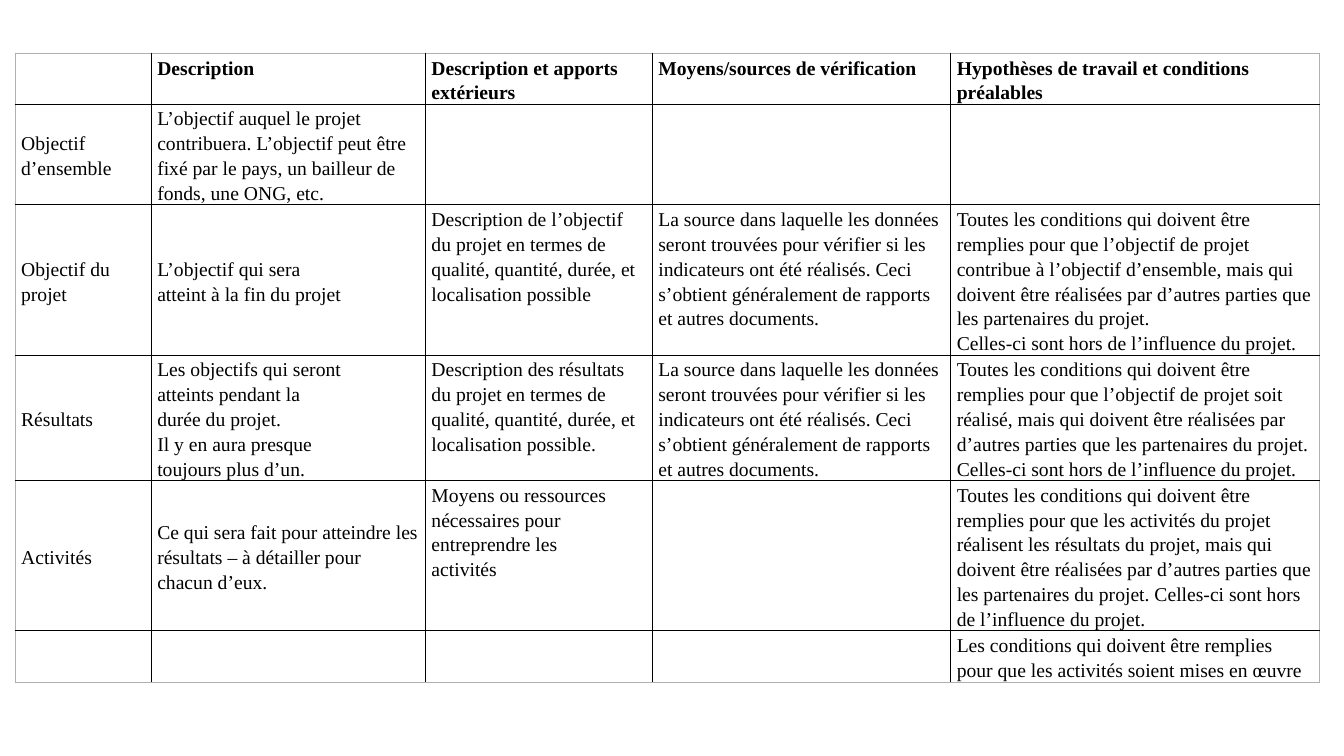
from dataclasses import dataclass

from pptx import Presentation
from pptx.dml.color import RGBColor
from pptx.enum.text import MSO_ANCHOR
from pptx.oxml.ns import qn
from pptx.util import Inches, Pt
from lxml.etree import SubElement

BLACK = RGBColor(0x00, 0x00, 0x00)
GREY = RGBColor(0xB0, 0xB0, 0xB0)
BORDER_WIDTH = Pt(1)
FONT = {"name": "Times New Roman", "size": Pt(14)}
MARGINS = {"margin_left": Inches(0.06), "margin_right": Inches(0.06),
           "margin_top": Inches(0.01), "margin_bottom": Inches(0)}
COLUMN_WIDTHS = (1.35, 2.72, 2.25, 2.96, 3.66)
SOURCES = ("La source dans laquelle les données seront trouvées pour vérifier si les "
           "indicateurs ont été réalisés. Ceci s’obtient généralement de rapports et "
           "autres documents.")


@dataclass(frozen=True)
class Level:
    height: float
    name: str = ""
    description: str = ""
    inputs: str = ""
    sources: str = ""
    conditions: str = ""

    def texts(self) -> tuple[str, ...]:
        return self.name, self.description, self.inputs, self.sources, self.conditions


LEVELS = (
    Level(0.42, "", "Description", "Description et apports extérieurs",
          "Moyens/sources de vérification",
          "Hypothèses de travail et conditions préalables"),
    Level(0.85, "Objectif d’ensemble",
          "L’objectif auquel le projet contribuera. L’objectif peut être fixé par le "
          "pays, un bailleur de fonds, une ONG, etc."),
    Level(1.18, "Objectif du projet",
          "L’objectif qui sera\natteint à la fin du projet",
          "Description de l’objectif du projet en termes de qualité, quantité, durée, "
          "et localisation possible",
          SOURCES,
          "Toutes les conditions qui doivent être remplies pour que l’objectif de "
          "projet contribue à l’objectif d’ensemble, mais qui doivent être réalisées "
          "par d’autres parties que les partenaires du projet.\n"
          "Celles-ci sont hors de l’influence du projet."),
    Level(1.02, "Résultats",
          "Les objectifs qui seront\natteints pendant la\ndurée du projet.\n"
          "Il y en aura presque\ntoujours plus d’un.",
          "Description des résultats du projet en termes de\n"
          "qualité, quantité, durée, et localisation possible.",
          SOURCES,
          "Toutes les conditions qui doivent être remplies pour que l’objectif de "
          "projet soit réalisé, mais qui doivent être réalisées par d’autres parties "
          "que les partenaires du projet. Celles-ci sont hors de l’influence du projet."),
    Level(1.18, "Activités",
          "Ce qui sera fait pour atteindre les résultats – à détailler pour chacun d’eux.",
          "Moyens ou ressources nécessaires pour entreprendre les\nactivités",
          "",
          "Toutes les conditions qui doivent être remplies pour que les activités du "
          "projet réalisent les résultats du projet, mais qui doivent être réalisées "
          "par d’autres parties que les partenaires du projet. Celles-ci sont hors de "
          "l’influence du projet."),
    Level(0.51, conditions="Les conditions qui doivent être remplies pour que les "
                           "activités soient mises en œuvre"),
)


def set_borders(cell, row: int, col: int) -> None:
    """Draw grey lines on the table's outer edge and black ones inside."""
    outer = {"a:lnL": col == 0, "a:lnR": col == len(COLUMN_WIDTHS) - 1,
             "a:lnT": row == 0, "a:lnB": row == len(LEVELS) - 1}
    tc_pr = cell._tc.get_or_add_tcPr()
    for tag, is_outer in outer.items():
        line = SubElement(tc_pr, qn(tag), w=str(BORDER_WIDTH))
        fill = SubElement(line, qn("a:solidFill"))
        SubElement(fill, qn("a:srgbClr"), val=str(GREY if is_outer else BLACK))


def format_cell(cell, text: str, row: int, col: int) -> None:
    set_borders(cell, row, col)
    cell.fill.background()
    for key, value in MARGINS.items():
        setattr(cell, key, value)
    cell.vertical_anchor = MSO_ANCHOR.MIDDLE if row and col < 2 else MSO_ANCHOR.TOP
    cell.text = text
    for p in cell.text_frame.paragraphs:
        p.line_spacing = 1.15
        for key, value in {**FONT, "bold": row == 0}.items():
            for font in (p.font, *(r.font for r in p.runs)):
                setattr(font, key, value)
        for r in p.runs:
            r.font.color.rgb = BLACK


def add_framework(s) -> None:
    table = s.shapes.add_table(
        len(LEVELS), len(COLUMN_WIDTHS), Inches(0.15), Inches(0.53),
        Inches(sum(COLUMN_WIDTHS)), Inches(sum(level.height for level in LEVELS))).table
    table.first_row = table.horz_banding = False
    for column, width in zip(table.columns, COLUMN_WIDTHS):
        column.width = Inches(width)
    for row, level in enumerate(LEVELS):
        table.rows[row].height = Inches(level.height)
        for col, text in enumerate(level.texts()):
            format_cell(table.cell(row, col), text, row, col)


def main() -> None:
    prs = Presentation()
    prs.slide_width, prs.slide_height = Inches(13.33), Inches(7.5)
    s = prs.slides.add_slide(prs.slide_layouts[6])
    add_framework(s)
    prs.save("out.pptx")


if __name__ == "__main__":
    main()
